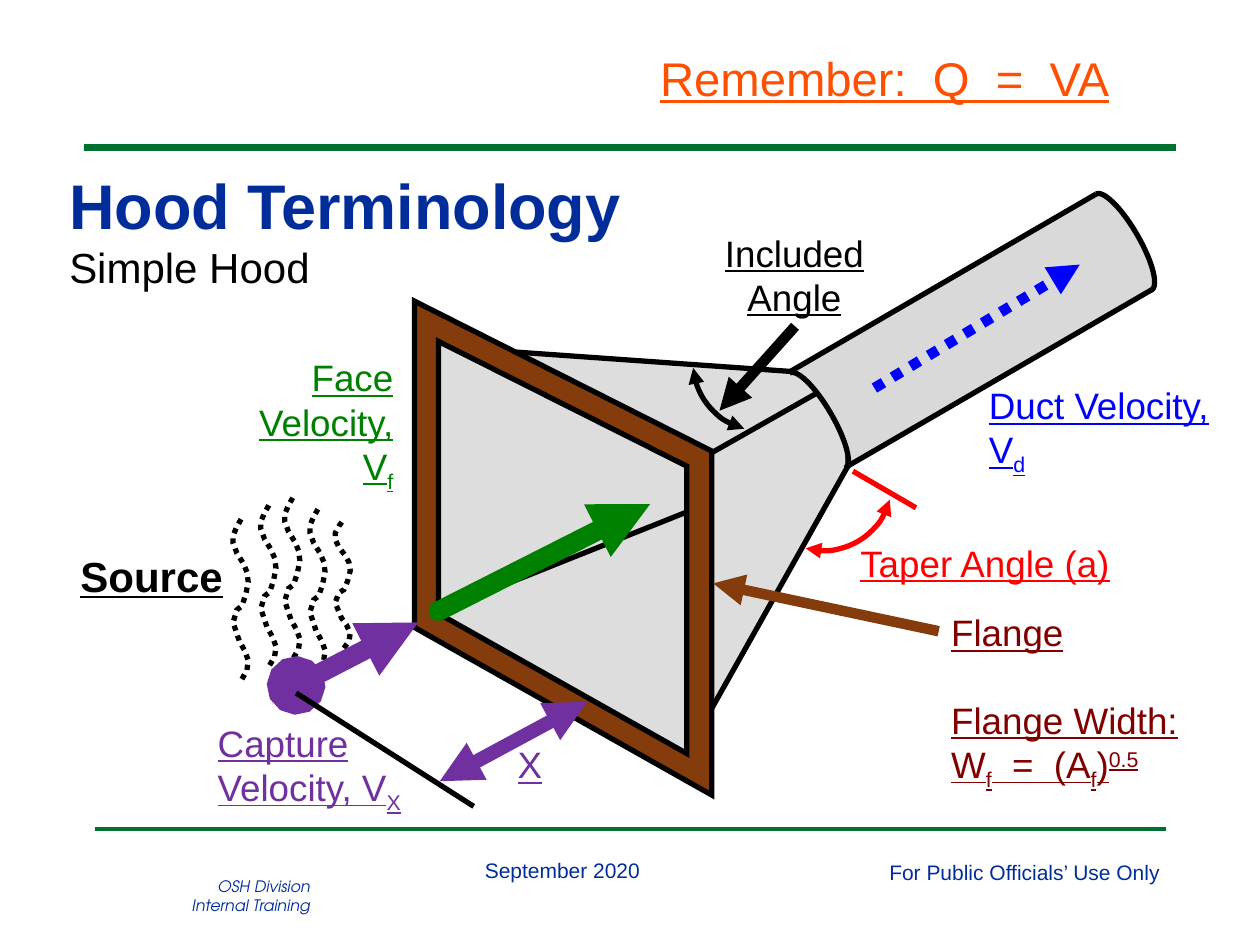
import pptx
import pptx.util
import pptx.dml.color
import pptx.enum.dml
import pptx.enum.shapes
import pptx.enum.text
import pptx.oxml.ns
import lxml.etree

Inches = pptx.util.Inches
RGBColor = pptx.dml.color.RGBColor
ALIGN = pptx.enum.text.PP_ALIGN
ANCHOR = pptx.enum.text.MSO_ANCHOR
DOTTED = pptx.enum.dml.MSO_LINE.ROUND_DOT
qn = pptx.oxml.ns.qn

BLACK = RGBColor(0x00, 0x00, 0x00)
NAVY = RGBColor(0x01, 0x2D, 0x9A)
RULE_GREEN = RGBColor(0x00, 0x70, 0x30)
GREEN = RGBColor(0x00, 0x80, 0x00)
PURPLE = RGBColor(0x70, 0x30, 0xA0)
BLUE = RGBColor(0x00, 0x00, 0xFF)
RED = RGBColor(0xFF, 0x00, 0x00)
BROWN = RGBColor(0x84, 0x3C, 0x0C)
MAROON = RGBColor(0x80, 0x00, 0x00)
ORANGE = RGBColor(0xFF, 0x50, 0x01)
HOOD_GREY = RGBColor(0xDD, 0xDD, 0xDD)
DUCT_GREY = RGBColor(0xD9, 0xD9, 0xD9)

deck = pptx.Presentation()
deck.slide_width, deck.slide_height = Inches(10), Inches(7.5)
slide = deck.slides.add_slide(deck.slide_layouts[6])
shapes = slide.shapes


def stroke(part, color, width, dash=None, head=None, tail=None):
    """Style an outline, with optional dashes and arrowheads."""
    part.line.color.rgb = color
    part.line.width = pptx.util.Pt(width)
    if dash:
        part.line.dash_style = dash
    ln = part.line._get_or_add_ln()
    lxml.etree.SubElement(ln, qn("a:miter"), lim="800000")
    for tag, end in (("a:headEnd", head), ("a:tailEnd", tail)):
        if end:
            lxml.etree.SubElement(ln, qn(tag), type=end)


def add_path(points, color, width, fill=None, **style):
    """Draw two points as a connector, more as an outline closed when filled."""
    corners = [(Inches(x), Inches(y)) for x, y in points]
    if len(corners) == 2:
        part = shapes.add_connector(pptx.enum.shapes.MSO_CONNECTOR.STRAIGHT,
                                    *corners[0], *corners[1])
        lxml.etree.SubElement(part._element.spPr, qn("a:effectLst"))
    else:
        builder = shapes.build_freeform(*corners[0])
        builder.add_line_segments(corners[1:], close=fill is not None)
        part = builder.convert_to_shape()
        part.shadow.inherit = False
        if fill is None:
            part.fill.background()
        else:
            part.fill.solid()
            part.fill.fore_color.rgb = fill
    if width:
        stroke(part, color, width, **style)
    else:
        part.line.fill.background()
    return part


# Header and footer rules
add_path([(0.67, 1.17), (9.33, 1.17)], RULE_GREEN, 4)
add_path([(0.75, 6.58), (9.25, 6.58)], RULE_GREEN, 2)

# Hood: cone, cone ridge, flange, face opening, rear edge
hood = [
    ([(5.46, 5.96), (6.73, 3.7), (6.73, 2.98), (3.47, 2.75)], HOOD_GREY),
    ([(6.73, 2.98), (5.46, 3.7)], None),
    ([(3.29, 2.39), (5.65, 3.58), (5.65, 6.31), (3.29, 4.98)], BROWN),
    ([(3.48, 2.71), (5.45, 3.7), (5.45, 5.98), (3.48, 4.87)], HOOD_GREY),
    ([(3.48, 4.85), (5.46, 4.06)], None),
]
for points, fill in hood:
    add_path(points, BLACK, 3, fill)

# Fumes rising from the source: one wave, moved and scaled
wave = [(0.07, 1.28), (0.11, 1.21), (0.12, 1.13), (0.09, 1.05), (0.05, 0.98),
        (0.03, 0.92), (0, 0.83), (0.03, 0.73), (0.07, 0.7), (0.1, 0.61),
        (0.12, 0.51), (0.11, 0.43), (0.08, 0.36), (0.03, 0.28), (0, 0.2),
        (0, 0.14), (0.03, 0.07), (0.07, 0)]
for left, top, stretch in [(2.07, 4, 1), (1.85, 4.11, 1), (2.26, 3.94, 1),
                           (2.46, 4.03, 1), (2.66, 4.12, 0.8)]:
    add_path([(left + x, top + y * stretch) for x, y in wave], BLACK, 3, dash=DOTTED)

# Duct body and its two long edges
duct = [(6.27, 2.95), (8.7, 1.54), (8.73, 1.54), (8.85, 1.61), (8.99, 1.8),
        (9.06, 1.92), (9.16, 2.15), (9.16, 2.29), (9.14, 2.3), (6.71, 3.71),
        (6.73, 3.7), (6.72, 3.56), (6.63, 3.34), (6.56, 3.22), (6.39, 3.01)]
add_path(duct, None, 0, DUCT_GREY)
add_path([(6.27, 2.95), (8.7, 1.54)], BLACK, 3)
add_path([(6.71, 3.71), (9.14, 2.3)], BLACK, 3)

# Duct ends, then taper angle and included angle
arrows = dict(head="triangle", tail="triangle")
arcs = [
    ((6.37, 2.9, 0.24, 0.88), 329.8, 54.36, BLACK, {}),
    ((8.8, 1.48, 0.24, 0.88), 329.8, 54.36, BLACK, {}),
    ((5.99, 3.28, 1.09, 1.09), 105, 0, RED, arrows),
    ((5.5, 2.33, 1.09, 1.09), 194.7, 204.32, BLACK, arrows),
]
for box, turn, sweep_end, color, ends in arcs:
    arc = shapes.add_shape(pptx.enum.shapes.MSO_SHAPE.ARC, *map(Inches, box))
    arc.shadow.inherit = False
    arc.fill.background()
    arc.rotation = turn
    arc.adjustments[0], arc.adjustments[1] = 162, sweep_end
    stroke(arc, color, 3, **ends)

# Velocity arrows, pointers and reference lines
add_path([(2.35, 5.44), (3.32, 4.94)], PURPLE, 11.25, head="oval", tail="triangle")
add_path([(2.35, 5.5), (3.76, 6.4)], BLACK, 3)
add_path([(6.77, 3.74), (7.27, 4.03)], RED, 3)
add_path([(5.71, 3.26), (6.31, 2.59)], BLACK, 6, head="triangle")
add_path([(5.66, 4.63), (7.45, 5.01)], BROWN, 6, head="triangle")
add_path([(6.94, 3.08), (8.57, 2.1)], BLUE, 6, dash=DOTTED, tail="triangle")
add_path([(4.66, 5.57), (3.49, 6.2)], PURPLE, 8, **arrows)
face_arrow = add_path([(3.48, 4.85), (5.16, 4)], GREEN, 11.25, tail="triangle")
face_arrow.line._get_or_add_ln().set("cap", "rnd")

# Title and subtitle
title = shapes.add_textbox(Inches(0.5), Inches(1.31), Inches(6.5), Inches(1.01)).text_frame
title.word_wrap = True
title.vertical_anchor = ANCHOR.BOTTOM
title.margin_left = title.margin_right = Inches(0.05)
title.margin_top = title.margin_bottom = 0
heading = title.paragraphs[0]
for text, size, color, bold in [("Hood Terminology", 36, NAVY, True),
                                ("Simple Hood", 24, BLACK, False)]:
    if heading.runs:
        heading.add_line_break()
    run = heading.add_run()
    run.text = text
    run.font.name, run.font.size, run.font.bold = "Arial", pptx.util.Pt(size), bold
    run.font.color.rgb = color

# Labels: box, colour, size, alignment, lines of (text, baseline %), extras
labels = [
    ((6.96, 6.77, 2.37, 0.3), NAVY, 12, ALIGN.LEFT,
     [[("For Public Officials’ Use Only", 0)]], {"footer": True}),
    ((1.17, 6.91, 1.39, 0.49), NAVY, 9, ALIGN.RIGHT,
     [[("OSH Division", 0)], [("Internal Training", 0)]],
     {"footer": True, "italic": True, "font": "TeX Gyre Adventor"}),
    ((3.75, 6.76, 1.44, 0.3), NAVY, 12, ALIGN.LEFT,
     [[("September 2020", 0)]], {"footer": True}),
    ((0.54, 4.32, 1.34, 0.5), BLACK, 24, ALIGN.LEFT,
     [[("Source", 0)]], {"bold": True, "one_line": True}),
    ((1.63, 5.67, 1.94, 0.81), PURPLE, 21, ALIGN.LEFT,
     [[("Capture", 0)], [("Velocity, V", 0), ("X", -25)]], {}),
    ((4.01, 5.84, 0.41, 0.45), PURPLE, 21, ALIGN.LEFT, [[("X", 0)]], {}),
    ((7.75, 2.99, 2.16, 0.81), BLUE, 21, ALIGN.LEFT,
     [[("Duct Velocity, V", 0), ("d", -25)]], {}),
    ((1.66, 2.77, 1.56, 1.16), GREEN, 21, ALIGN.RIGHT,
     [[("Face Velocity, V", 0), ("f", -25)]], {}),
    ((6.73, 4.24, 2.42, 0.45), RED, 21, ALIGN.LEFT, [[("Taper Angle (a)", 0)]], {}),
    ((5.55, 1.78, 1.51, 0.81), BLACK, 21, ALIGN.CENTER, [[("Included Angle", 0)]], {}),
    ((7.45, 4.79, 2.21, 1.51), MAROON, 21, ALIGN.LEFT,
     [[("Flange", 0)], [("Flange Width:", 0)],
      [("W", 0), ("f", -25), ("  =  (A", 0), ("f", -25), (")", 0), ("0.5", 30)]],
     {"gap_before": {1: 25}}),
    ((5.14, 0.34, 4.01, 0.56), ORANGE, 27, ALIGN.LEFT, [[("Remember:  Q  =  VA", 0)]], {}),
]
for box, color, size, align, lines, extra in labels:
    label = shapes.add_textbox(*map(Inches, box)).text_frame
    footer = extra.get("footer", False)
    label.word_wrap = not (footer or extra.get("one_line"))
    for number, pieces in enumerate(lines):
        line = label.add_paragraph() if number else label.paragraphs[0]
        line.alignment = align
        if number in extra.get("gap_before", {}):
            line.space_before = pptx.util.Pt(extra["gap_before"][number])
        for text, baseline in pieces:
            run = line.add_run()
            run.text = text
            run.font.name = extra.get("font", "Arial")
            run.font.size = pptx.util.Pt(size)
            run.font.color.rgb = color
            run.font.bold = extra.get("bold", False)
            run.font.italic = extra.get("italic", False)
            run.font.underline = not footer
            if baseline:
                run.font._element.set("baseline", str(baseline * 1000))

deck.save("out.pptx")
